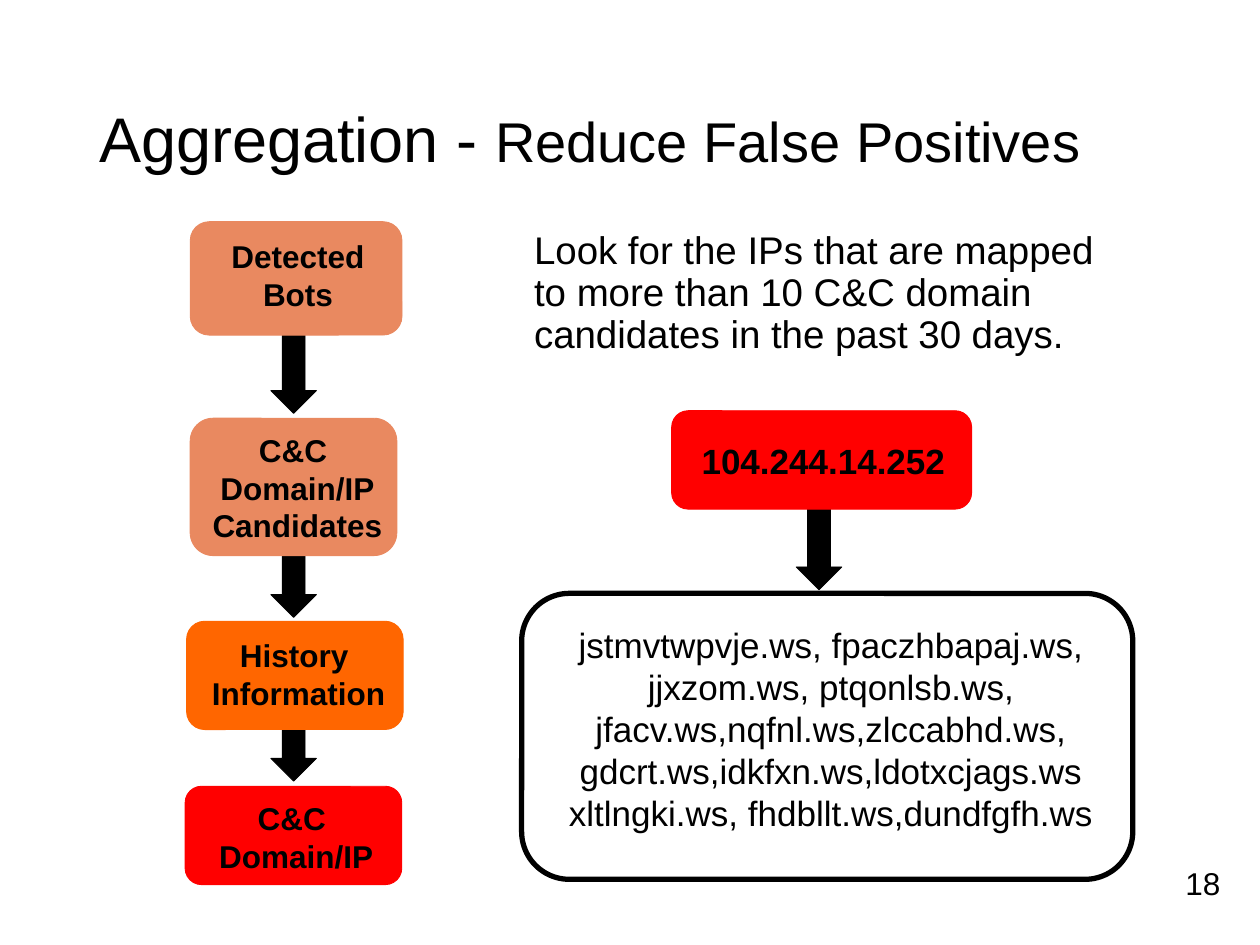
import pptx
import pptx.util
import pptx.dml.color
import pptx.enum.shapes
import pptx.enum.text

Pt = pptx.util.Pt
Kind = pptx.enum.shapes.MSO_SHAPE
Align = pptx.enum.text.PP_ALIGN
Anchor = pptx.enum.text.MSO_ANCHOR


def tint(text):
    return pptx.dml.color.RGBColor.from_string(text)


def write(area, lines, size, bold=False, align=Align.LEFT, wrap=True, gap=None):
    box = slide.shapes.add_textbox(*map(Pt, area))
    frame = box.text_frame
    frame.word_wrap = wrap
    for i, line in enumerate(lines):
        para = frame.paragraphs[0] if i == 0 else frame.add_paragraph()
        para.alignment = align
        para.line_spacing = gap
        run = para.add_run()
        run.text = line
        run.font.name = "Arial"
        run.font.size = Pt(size)
        run.font.bold = bold
        run.font.color.rgb = tint("000000")
    return frame


deck = pptx.Presentation()
deck.slide_width = Pt(720)
deck.slide_height = Pt(540)
slide = deck.slides.add_slide(deck.slide_layouts[6])

for mid, top in [(468, 288), (167.8, 397.4), (167.8, 303.8), (167.8, 187.2)]:
    arrow = slide.shapes.add_shape(Kind.RIGHT_ARROW, Pt(mid - 36), Pt(top), Pt(72), Pt(26))
    arrow.rotation = 90
    arrow.shadow.inherit = False
    arrow.fill.solid()
    arrow.fill.fore_color.rgb = tint("000000")
    arrow.line.color.rgb = tint("000000")
    arrow.line.width = Pt(0.5)

title = write((49.7, 28.8, 620.6, 104.4), ["Aggregation - "], 36, gap=0.9)
title.vertical_anchor = Anchor.MIDDLE
run = title.paragraphs[0].add_run()
run.text = "Reduce False Positives"
run.font.name = "Arial"
run.font.size = Pt(32)
run.font.color.rgb = tint("000000")

cards = [
    ((108.7, 126.7, 121, 64.8), "E98960", (124.6, 131.8, 91.4, 51.1),
     ["Detected", "Bots"], 18, Align.CENTER, False),
    ((108.7, 239, 118.1, 78.5), "E98960", (113.8, 242.6, 112.3, 72.7),
     ["C&C ", "Domain/IP", "Candidates"], 18, Align.CENTER, False),
    ((106.6, 355, 123.8, 61.9), "FF6600", (111.6, 360, 118.1, 51.1),
     ["History ", "Information"], 18, Align.CENTER, True),
    ((105.8, 449.3, 123.8, 56.2), "FF0000", (110.2, 452.9, 118.1, 51.1),
     ["C&C ", "Domain/IP"], 18, Align.CENTER, True),
    ((298.1, 339.1, 349.2, 163.4), None, (312.5, 352.8, 324.7, 128.2),
     ["jstmvtwpvje.ws, fpaczhbapaj.ws,",
      "jjxzom.ws, ptqonlsb.ws, jfacv.ws,nqfnl.ws,zlccabhd.ws,",
      "gdcrt.ws,idkfxn.ws,ldotxcjags.ws",
      "xltlngki.ws, fhdbllt.ws,dundfgfh.ws"], 20, Align.CENTER, True),
    ((383.8, 234.7, 171.4, 56.2), "FF0000", (393.8, 247.7, 157, 31.7),
     ["104.244.14.252"], 20, Align.LEFT, True),
]
for area, fill, inner, lines, size, align, wrap in cards:
    card = slide.shapes.add_shape(Kind.ROUNDED_RECTANGLE, *map(Pt, area))
    card.shadow.inherit = False
    if fill:
        card.fill.solid()
        card.fill.fore_color.rgb = tint(fill)
    else:
        card.fill.background()
    card.line.color.rgb = tint(fill or "000000")
    card.line.width = Pt(0.5 if fill else 3)
    write(inner, lines, size, fill is not None, align, wrap)

write((298.1, 128.9, 339.1, 103),
      ["Look for the IPs that are mapped to more than 10 C&C domain candidates in the past 30 days."],
      22, gap=0.9)
write((670.3, 490.3, 34.6, 28.8), ["18"], 18, wrap=False)

deck.save("out.pptx")
